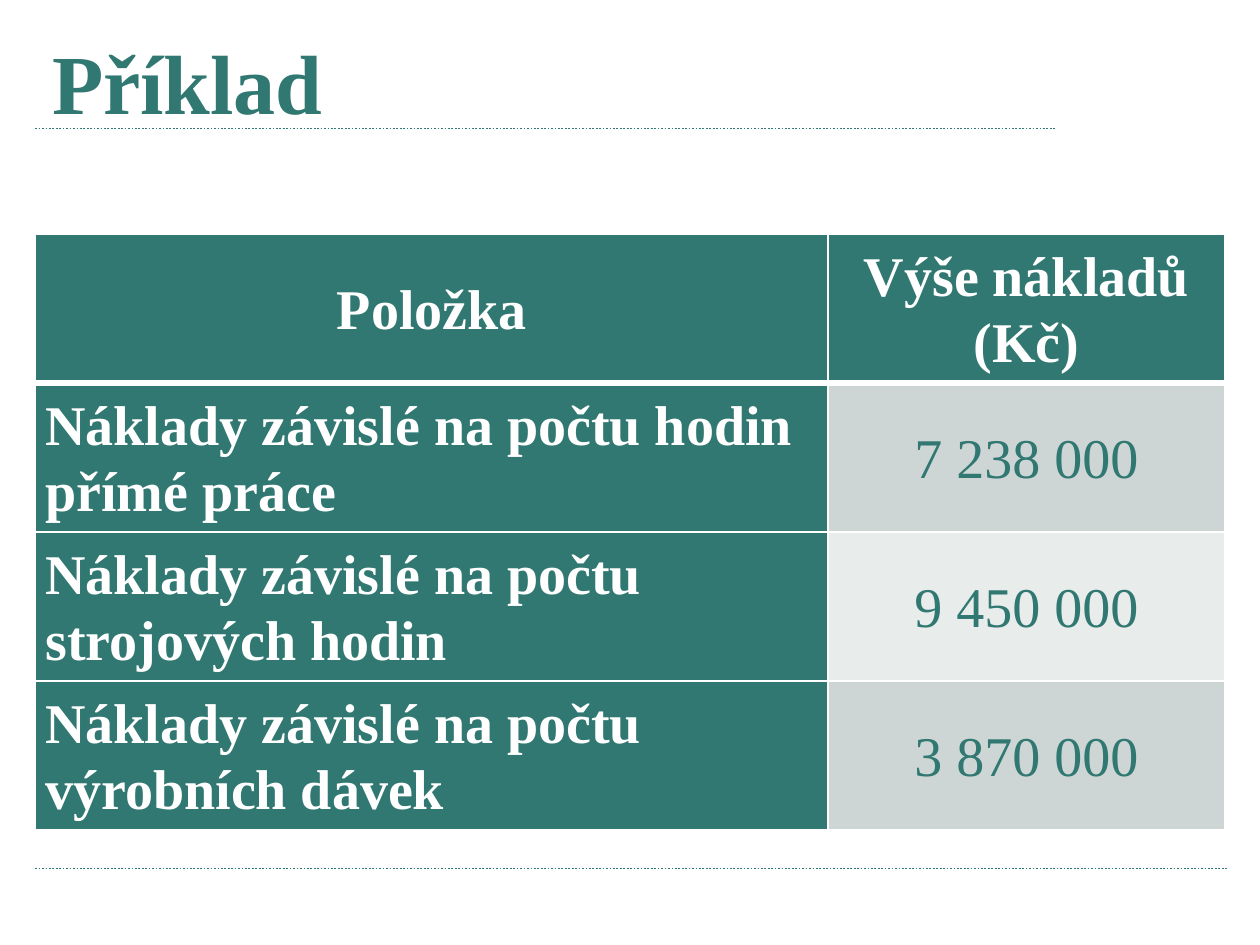
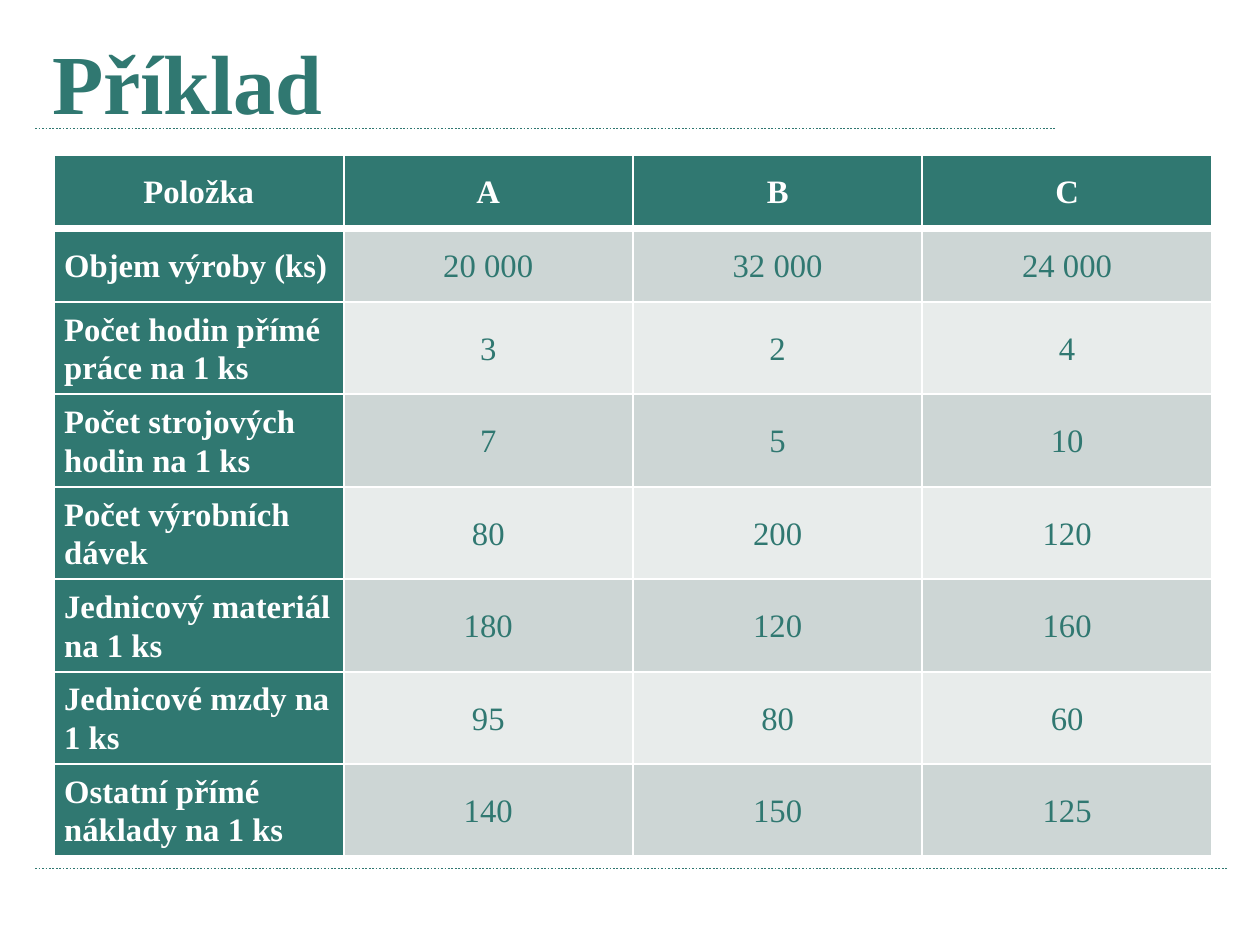
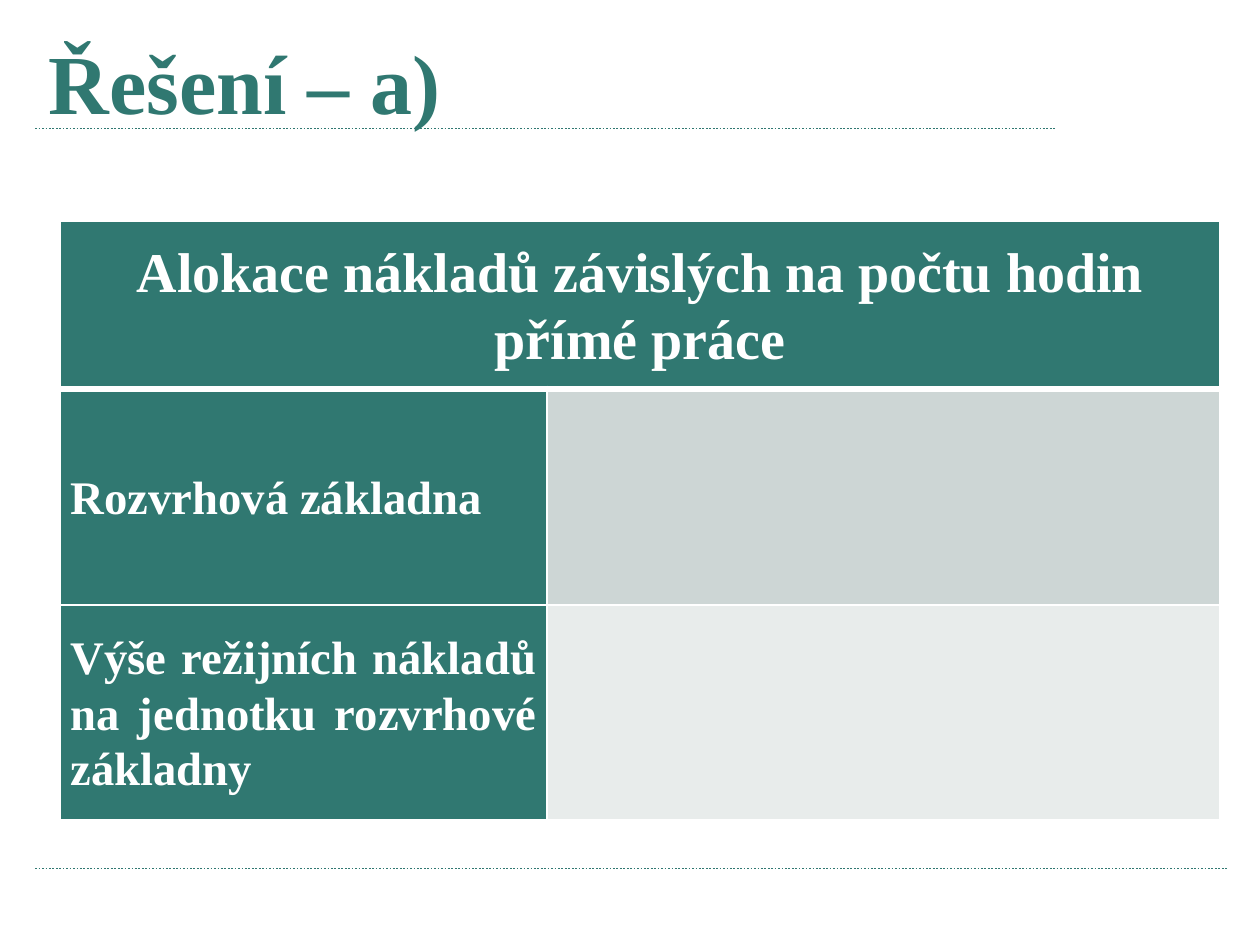
from pptx import Presentation
from pptx.dml.color import RGBColor
from pptx.enum.dml import MSO_LINE
from pptx.enum.shapes import MSO_CONNECTOR
from pptx.enum.text import MSO_ANCHOR, MSO_AUTO_SIZE, PP_ALIGN
from pptx.oxml import parse_xml
from pptx.oxml.ns import nsdecls
from pptx.util import Inches, Pt
from lxml.etree import SubElement

INK = {"teal": "307871", "white": "FFFFFF", "dark": "CDD6D5", "light": "E8ECEB"}
FONT = "Times New Roman"
COLS, ROWS = 75, 56.25
LEFT = 2.1


class Deck:
    """Holds the style and the current slide; lengths are grid columns and rows."""

    def __init__(self):
        self.prs = Presentation()
        self.prs.slide_width = Inches(7.5)
        self.prs.slide_height = Inches(7.5 * 3 / 4)
        self.page = None

    def x(self, cols):
        return round(self.prs.slide_width * cols / COLS)

    def y(self, rows):
        return round(self.prs.slide_height * rows / ROWS)

    def slide(self, title, left=LEFT):
        first = self.page is None
        layout = self.prs.slide_layouts[5]
        self.page = self.prs.slides.add_slide(layout)
        if first:
            self.rule(layout, 7.65, 62.9, 101)
            self.rule(layout, 51.7, 73.1, 102)
        self.title(title, left)

    def rule(self, layout, row, end, key):
        """Draw a dotted line and hand it to the layout, so every slide shows it."""
        line = self.page.shapes.add_connector(
            MSO_CONNECTOR.STRAIGHT, self.x(LEFT), self.y(row), self.x(end), self.y(row))
        line.line.color.rgb = RGBColor.from_string(INK["teal"])
        line.line.width = Pt(0.75)
        line.line.dash_style = MSO_LINE.ROUND_DOT
        node = line.element
        SubElement(node.spPr, "{http://schemas.openxmlformats.org/drawingml/2006/main}effectLst")
        node.xpath("./p:nvCxnSpPr/p:cNvPr")[0].set("id", str(key))
        layout.shapes.element.append(node)

    def style(self, para, size, color, bold, align):
        para.alignment = align
        for run in para.runs:
            run.font.name = FONT
            run.font.size = Pt(size)
            run.font.bold = bold
            run.font.color.rgb = RGBColor.from_string(INK[color])

    def title(self, text, left):
        box = self.page.shapes.title
        box.left, box.top = self.x(left), self.y(1.4)
        box.width, box.height = self.x(66.1), self.y(5.9)
        frame = box.text_frame
        frame.text = text
        frame.word_wrap = True
        frame.auto_size = MSO_AUTO_SIZE.NONE
        frame.vertical_anchor = MSO_ANCHOR.TOP
        frame.margin_top, frame.margin_bottom = Inches(0.04), 0
        self.style(frame.paragraphs[0], 36, "teal", True, PP_ALIGN.LEFT)

    def edges(self, cell, row):
        """Give a cell white borders, with a thick one under the header."""
        widths = {"L": 1, "R": 1, "T": 3 if row == 1 else 1, "B": 3 if row == 0 else 1}
        props = cell._tc.get_or_add_tcPr()
        for side, width in widths.items():
            props.append(parse_xml(
                f'<a:ln{side} {nsdecls("a")} w="{Pt(width)}"><a:solidFill>'
                f'<a:srgbClr val="{INK["white"]}"/></a:solidFill></a:ln{side}>'))

    def cell(self, cell, text, row, col, size, align):
        head = row == 0 or col == 0
        self.edges(cell, row)
        cell.fill.solid()
        fill = "teal" if head else "dark" if row % 2 else "light"
        cell.fill.fore_color.rgb = RGBColor.from_string(INK[fill])
        cell.vertical_anchor = MSO_ANCHOR.MIDDLE
        cell.margin_left = cell.margin_right = Inches(0.06)
        cell.margin_top = cell.margin_bottom = 0
        if text:
            cell.text_frame.text = text
            para = cell.text_frame.paragraphs[0]
            para.line_spacing = 1.07
            self.style(para, size, "white" if head else "teal", head, align)

    def table(self, data, left, top, wide, high, size, small=None, side=PP_ALIGN.LEFT):
        """Draw a table; small is the body text size and side aligns the first column."""
        grid = self.page.shapes.add_table(
            len(high), len(wide), self.x(left), self.y(top),
            self.x(sum(wide)), self.y(sum(high))).table
        for col, width in zip(grid.columns, wide):
            col.width = self.x(width)
        for row, height in zip(grid.rows, high):
            row.height = self.y(height)
        for r, line in enumerate(data):
            for c, text in enumerate(line):
                align = side if r and c == 0 else PP_ALIGN.CENTER
                self.cell(grid.cell(r, c), text, r, c, (small or size) if r else size, align)
        return grid


def main():
    deck = Deck()

    deck.slide("Příklad")
    deck.table([
        ("Položka", "Výše nákladů (Kč)"),
        ("Náklady závislé na počtu hodin přímé práce", "7 238 000"),
        ("Náklady závislé na počtu strojových hodin", "9 450 000"),
        ("Náklady závislé na počtu výrobních dávek", "3 870 000"),
    ], LEFT, 13.95, [47.2, 23.6], [8.86] * 4, 24)

    deck.slide("Příklad")
    deck.table([
        ("Položka", "A", "B", "C"),
        ("Objem výroby (ks)", "20 000", "32 000", "24 000"),
        ("Počet hodin přímé práce na 1 ks", "3", "2", "4"),
        ("Počet strojových hodin na 1 ks", "7", "5", "10"),
        ("Počet výrobních dávek", "80", "200", "120"),
        ("Jednicový materiál na 1 ks", "180", "120", "160"),
        ("Jednicové mzdy na 1 ks", "95", "80", "60"),
        ("Ostatní přímé náklady na 1 ks", "140", "150", "125"),
    ], 3.22, 9.22, [17.23] * 4, [4.38] * 2 + [5.5] * 6, 14)

    deck.slide("Řešení – a)", 1.9)
    grid = deck.table([
        ("Alokace nákladů závislých na počtu hodin přímé práce", ""),
        ("Rozvrhová základna", ""),
        ("Výše režijních nákladů na jednotku rozvrhové základny", ""),
    ], 3.6, 13.17, [28.95, 40.05], [9.97, 12.85, 12.85], 24, 20, PP_ALIGN.JUSTIFY)
    grid.cell(0, 0).merge(grid.cell(0, 1))

    deck.prs.save("out.pptx")


if __name__ == "__main__":
    main()
